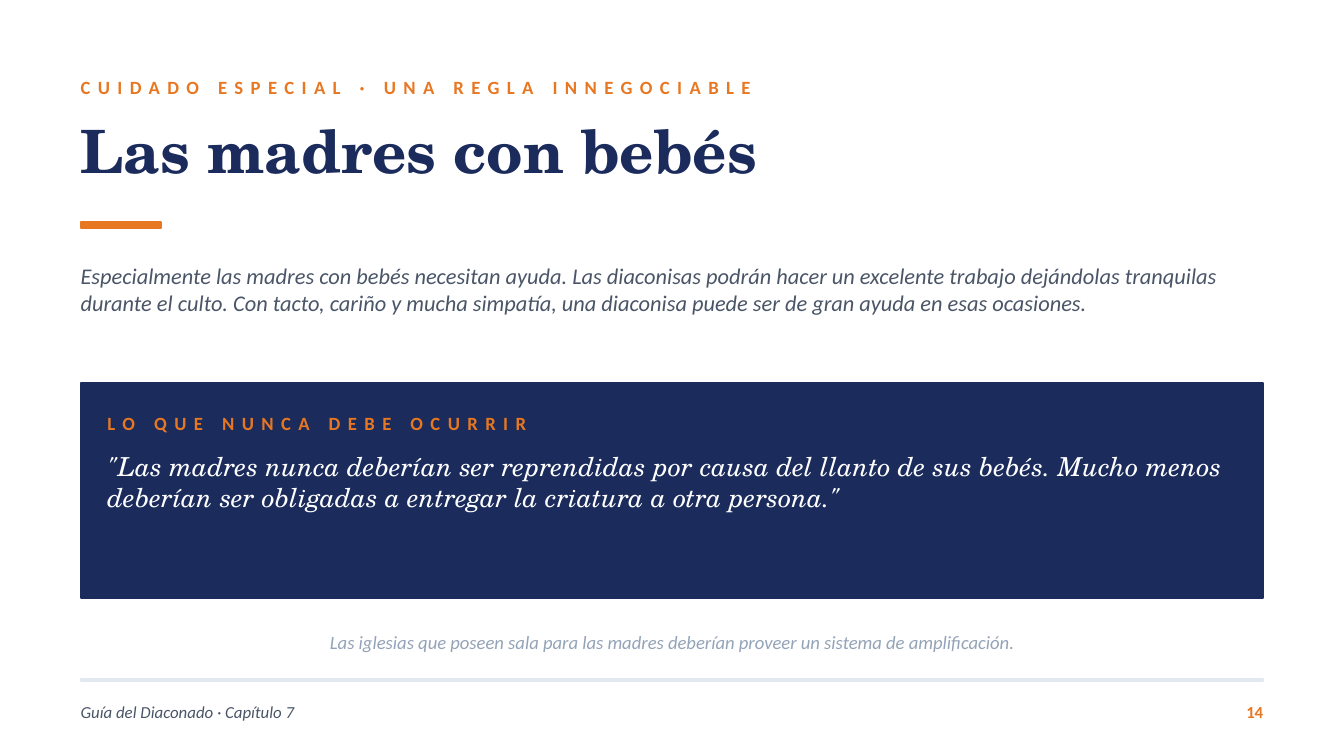
from pptx import Presentation
from pptx.dml.color import RGBColor
from pptx.enum.shapes import MSO_SHAPE
from pptx.enum.text import MSO_ANCHOR, MSO_AUTO_SIZE, PP_ALIGN
from pptx.util import Pt

RECT = MSO_SHAPE.RECTANGLE
TOP, MID = MSO_ANCHOR.TOP, MSO_ANCHOR.MIDDLE
LEFT, MID_X, RIGHT = PP_ALIGN.LEFT, PP_ALIGN.CENTER, PP_ALIGN.RIGHT

PX = 4572  # EMU per px, 200 px to the inch
EDGE, WIDE, PAD = 120, 1760, 40

SANS, SERIF = "Calibri", "TeX Gyre Schola"
NAVY, ORANGE, SLATE = "1A2B5C", "E87722", "4A5568"
# Text style: font, size, colour, bold, italic, letter spacing in points
THEME = {
    "label": (SANS, 10, ORANGE, True, False, 4),
    "title": (SERIF, 32, NAVY, True, False, 0),
    "intro": (SANS, 12, SLATE, False, True, 0),
    "quote": (SERIF, 14, "FFFFFF", False, True, 0),
    "note": (SANS, 10, "94A3B8", False, True, 0),
    "foot": (SANS, 9, SLATE, False, True, 0),
    "page": (SANS, 9, ORANGE, True, False, 0),
    "bar": ORANGE,
    "panel": NAVY,
    "rule": "E2E8F0",
}


def place(box):
    return [n * PX for n in box]


def write(shape, text, style, anchor=TOP, align=LEFT):
    name, size, color, bold, italic, gap = THEME[style]
    frame = shape.text_frame
    frame.text = text
    frame.word_wrap = True
    frame.auto_size = MSO_AUTO_SIZE.NONE
    frame.vertical_anchor = anchor
    frame.margin_left = frame.margin_right = 0
    frame.margin_top = frame.margin_bottom = 0
    para = frame.paragraphs[0]
    para.alignment = align
    run = para.runs[0]
    font = run.font
    font.name, font.size = name, Pt(size)
    font.bold, font.italic = bold, italic
    font.color.rgb = RGBColor.from_string(color)
    if gap:
        run._r.get_or_add_rPr().set("spc", str(gap * 100))


deck = Presentation()
deck.slide_width, deck.slide_height = 2000 * PX, 1125 * PX
slide = deck.slides.add_slide(deck.slide_layouts[5])
shapes = slide.shapes

title = shapes.title
title.left, title.top, title.width, title.height = place((EDGE, 170, 1800, 140))
write(title, "Las madres con bebés", "title")

blocks = [
    ("bar", (EDGE, 330, 120, 10)),
    ("panel", (EDGE, 570, WIDE, 320)),
    ("rule", (EDGE, 1010, WIDE, 4)),
]
for part, box in blocks:
    block = shapes.add_shape(RECT, *place(box))
    block.shadow.inherit = False
    color = RGBColor.from_string(THEME[part])
    block.fill.solid()
    block.fill.fore_color.rgb = color
    block.line.color.rgb = color
    block.line.width = Pt(1)

inner = EDGE + PAD
texts = [
    ((EDGE, 100, 1600, 60), "label", MID, LEFT,
     "CUIDADO ESPECIAL · UNA REGLA INNEGOCIABLE"),
    ((EDGE, 390, 1800, 140), "intro", TOP, LEFT,
     "Especialmente las madres con bebés necesitan ayuda. Las diaconisas "
     "podrán hacer un excelente trabajo dejándolas tranquilas durante el "
     "culto. Con tacto, cariño y mucha simpatía, una diaconisa puede ser de "
     "gran ayuda en esas ocasiones."),
    ((inner, 600, 1200, 60), "label", MID, LEFT,
     "LO QUE NUNCA DEBE OCURRIR"),
    ((inner, 670, WIDE - 2 * PAD, 200), "quote", TOP, LEFT,
     '"Las madres nunca deberían ser reprendidas por causa del llanto de sus '
     'bebés. Mucho menos deberían ser obligadas a entregar la criatura a otra '
     'persona."'),
    ((EDGE, 920, WIDE, 70), "note", MID, MID_X,
     "Las iglesias que poseen sala para las madres deberían proveer un "
     "sistema de amplificación."),
    ((EDGE, 1030, 1200, 60), "foot", MID, LEFT,
     "Guía del Diaconado · Capítulo 7"),
    ((EDGE + WIDE - 100, 1030, 100, 60), "page", MID, RIGHT, "14"),
]
for box, style, anchor, align, text in texts:
    write(shapes.add_textbox(*place(box)), text, style, anchor, align)

deck.save("out.pptx")
